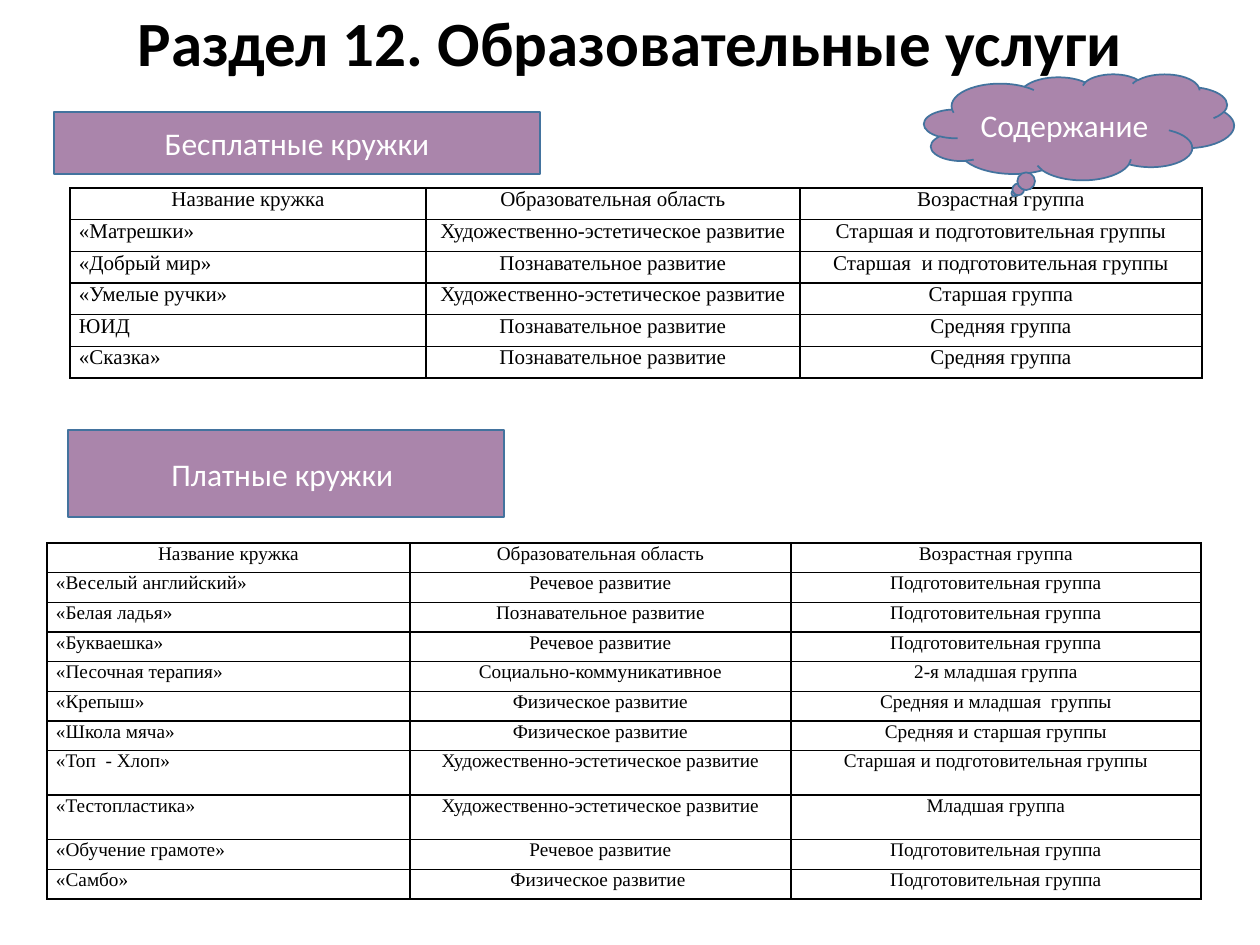
from lxml import etree
from pptx import Presentation
from pptx.dml.color import RGBColor
from pptx.enum.shapes import MSO_SHAPE
from pptx.enum.text import MSO_ANCHOR, PP_ALIGN
from pptx.oxml.ns import qn
from pptx.util import Pt

PX = 914400 / 126  # EMU in one px
BLACK = RGBColor(0x00, 0x00, 0x00)
WHITE = RGBColor(0xFF, 0xFF, 0xFF)
MAUVE = RGBColor(0xAA, 0x85, 0xAB)
BLUE = RGBColor(0x43, 0x73, 0x9E)
HEADING_FONT, TABLE_FONT = "Calibri", "Times New Roman"
LEFT, CENTER = PP_ALIGN.LEFT, PP_ALIGN.CENTER
TOP, MIDDLE = MSO_ANCHOR.TOP, MSO_ANCHOR.MIDDLE
RECTANGLE, CLOUD = MSO_SHAPE.RECTANGLE, MSO_SHAPE.CLOUD_CALLOUT

HEADER = ("Название кружка", "Образовательная область", "Возрастная группа")
ART = "Художественно-эстетическое развитие"
COGNITION = "Познавательное развитие"
SPEECH = "Речевое развитие"
SPORT = "Физическое развитие"
PREPARATORY = "Подготовительная группа"
MIDDLE_GROUP = "Средняя группа"

FREE_CLUBS = [
    HEADER,
    ("«Матрешки»", ART, "Старшая и подготовительная группы"),
    ("«Добрый мир»", COGNITION, "Старшая  и подготовительная группы"),
    ("«Умелые ручки»", ART, "Старшая группа"),
    ("ЮИД", COGNITION, MIDDLE_GROUP),
    ("«Сказка»", COGNITION, MIDDLE_GROUP),
]
PAID_CLUBS = [
    HEADER,
    ("«Веселый английский»", SPEECH, PREPARATORY),
    ("«Белая ладья»", COGNITION, PREPARATORY),
    ("«Букваешка»", SPEECH, PREPARATORY),
    ("«Песочная терапия»", "Социально-коммуникативное", "2-я младшая группа"),
    ("«Крепыш»", SPORT, "Средняя и младшая  группы"),
    ("«Школа мяча»", SPORT, "Средняя и старшая группы"),
    ("«Топ  - Хлоп»", ART, "Старшая и подготовительная группы"),
    ("«Тестопластика»", ART, "Младшая группа"),
    ("«Обучение грамоте»", SPEECH, PREPARATORY),
    ("«Самбо»", SPORT + " ", PREPARATORY),
]


def px(*lengths):
    return [round(length * PX) for length in lengths]


def write(frame, text, size, font=HEADING_FONT, color=BLACK, bold=False,
          align=CENTER, spacing=None):
    paragraph = frame.paragraphs[0]
    paragraph.alignment = align
    paragraph.line_spacing = spacing
    run = paragraph.add_run()
    run.text = text
    run.font.size = Pt(size)
    run.font.name = font
    run.font.bold = bold
    run.font.color.rgb = color


def add_title(slide, box, text):
    frame = slide.shapes.add_textbox(*px(*box)).text_frame
    frame.word_wrap = True
    frame.vertical_anchor = TOP
    frame.margin_top = px(3)[0]
    write(frame, text, 36, bold=True, spacing=0.9)


def add_label(slide, box, text, kind=RECTANGLE):
    shape = slide.shapes.add_shape(kind, *px(*box))
    shape.shadow.inherit = False
    shape.fill.solid()
    shape.fill.fore_color.rgb = MAUVE
    shape.line.color.rgb = BLUE
    shape.line.width = Pt(1)
    shape.text_frame.word_wrap = True
    shape.text_frame.vertical_anchor = MIDDLE
    write(shape.text_frame, text, 18, color=WHITE)


def add_borders(cell):
    properties = cell._tc.get_or_add_tcPr()
    for side in ("lnL", "lnR", "lnT", "lnB"):
        line = etree.SubElement(properties, qn("a:" + side), w=str(Pt(1)))
        fill = etree.SubElement(line, qn("a:solidFill"))
        etree.SubElement(fill, qn("a:srgbClr"), val=str(BLACK))


def add_clubs(slide, box, clubs, columns, size, tall_rows=()):
    """Ordinary rows take two shares of the height, tall rows three."""
    shares = [3 if row in tall_rows else 2 for row in range(len(clubs))]
    table = slide.shapes.add_table(len(clubs), len(columns), *px(*box)).table
    table.first_row = table.horz_banding = False
    for column, width in zip(table.columns, px(*columns)):
        column.width = width
    for row, share in zip(table.rows, shares):
        row.height = px(box[3] * share / sum(shares))[0]
    for row, club in enumerate(clubs):
        for column, text in enumerate(club):
            cell = table.cell(row, column)
            add_borders(cell)
            cell.fill.background()
            cell.margin_left = cell.margin_right = px(9)[0]
            cell.margin_top = cell.margin_bottom = 0
            write(cell.text_frame, text, size, font=TABLE_FONT,
                  align=LEFT if row and not column else CENTER)


def main():
    presentation = Presentation()
    presentation.slide_width, presentation.slide_height = px(1260, 945)
    slide = presentation.slides.add_slide(presentation.slide_layouts[6])

    add_title(slide, (87, 9, 1086, 145), "Раздел 12. Образовательные услуги")

    # Tables of clubs
    add_clubs(slide, (70, 188, 1132, 190), FREE_CLUBS, (356, 374, 402), 12)
    add_clubs(slide, (47, 543, 1154, 356), PAID_CLUBS, (363, 381, 410), 11,
              tall_rows=(7, 8))

    # Section labels and the contents cloud
    add_label(slide, (68, 430, 436, 87), "Платные кружки ")
    add_label(slide, (54, 112, 486, 62), "Бесплатные кружки")
    add_label(slide, (924, 74, 310, 106), "Содержание ", kind=CLOUD)

    presentation.save("out.pptx")


if __name__ == "__main__":
    main()
